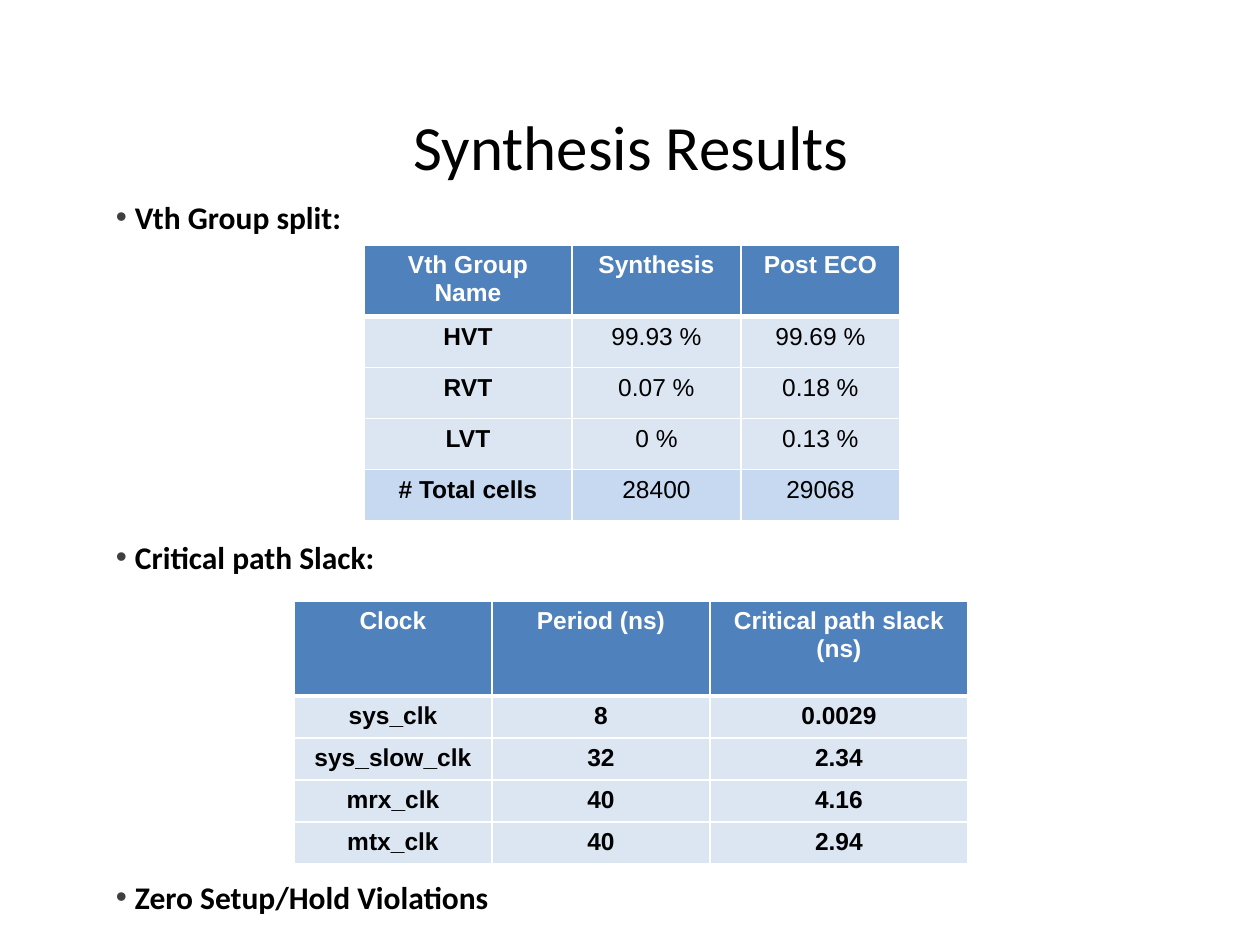
from lxml import etree
from pptx import Presentation, util as u
from pptx.dml.color import RGBColor
from pptx.enum import text
from pptx.oxml.ns import qn

TITLE = "Synthesis Results"
BULLETS = ["Vth Group split:", "Critical path Slack:", "Zero Setup/Hold Violations"]
GROUP_TABLE = {
    "origin": (364, 245), "columns": (208, 169, 159), "rows": (67, 51, 51, 51, 51),
    "bold_columns": 1, "total": True,
    "cells": [
        ("Vth Group Name", "Synthesis", "Post ECO"),
        ("HVT", "99.93 %", "99.69 %"),
        ("RVT", "0.07 %", "0.18 %"),
        ("LVT", "0 %", "0.13 %"),
        ("# Total cells", "28400", "29068"),
    ],
}
SLACK_TABLE = {
    "origin": (294, 601), "columns": (198, 218, 258), "rows": (95, 40, 40, 40, 40),
    "bold_columns": 3, "total": False,
    "cells": [
        ("Clock", "Period (ns)", "Critical path slack (ns)"),
        ("sys_clk", "8", "0.0029"),
        ("sys_slow_clk", "32", "2.34"),
        ("mrx_clk", "40", "4.16"),
        ("mtx_clk", "40", "2.94"),
    ],
}
THEME = {
    "heading_font": "Calibri", "table_font": "Arial",
    "title": 36, "bullet": 18, "cell": 14,
    "black": "000000", "white": "FFFFFF", "marker": "3F3F3F",
    "header": "4F81BD", "body": "DCE6F2", "total": "C6D9F1",
}
INSET = 13
BULLET_INDENT = 19
BULLET_MARGIN = 48
BULLET_GAP = 302


def px(length):
    return u.Emu(round(length * 914400 / 126))


def style(paragraph, font, size, color, bold=False):
    paragraph.font.name = THEME[font]
    paragraph.font.size = u.Pt(THEME[size])
    paragraph.font.color.rgb = RGBColor.from_string(THEME[color])
    paragraph.font.bold = bold


def add_text_frame(slide, left, top, width, height):
    frame = slide.shapes.add_textbox(px(left), px(top), px(width), px(height)).text_frame
    frame.word_wrap = True
    frame.margin_left = frame.margin_right = px(INSET)
    frame.margin_top = frame.margin_bottom = px(INSET)
    return frame


def add_bullet(paragraph):
    properties = paragraph._p.get_or_add_pPr()
    properties.set("marL", str(px(BULLET_MARGIN)))
    properties.set("indent", str(px(-BULLET_INDENT)))
    color = etree.SubElement(properties, qn("a:buClr"))
    etree.SubElement(color, qn("a:srgbClr"), val=THEME["marker"])
    etree.SubElement(properties, qn("a:buFont"), typeface=THEME["table_font"])
    etree.SubElement(properties, qn("a:buChar"), char="•")


def add_borders(cell, top, bottom):
    properties = cell._tc.get_or_add_tcPr()
    widths = {"lnL": 1, "lnR": 1, "lnT": top, "lnB": bottom}
    for position, (side, width) in enumerate(widths.items()):
        line = etree.Element(qn(f"a:{side}"), w=str(u.Pt(width)))
        fill = etree.SubElement(line, qn("a:solidFill"))
        etree.SubElement(fill, qn("a:srgbClr"), val=THEME["white"])
        properties.insert(position, line)


def add_table(slide, data):
    columns, rows, cells = data["columns"], data["rows"], data["cells"]
    left, top = data["origin"]
    table = slide.shapes.add_table(
        len(rows), len(columns), px(left), px(top), px(sum(columns)), px(sum(rows))
    ).table
    table.horz_banding = False
    for column, width in zip(table.columns, columns):
        column.width = px(width)
    for row_index, (height, values) in enumerate(zip(rows, cells)):
        table.rows[row_index].height = px(height)
        header = row_index == 0
        total = data["total"] and row_index == len(rows) - 1
        fill = "header" if header else "total" if total else "body"
        for column_index, value in enumerate(values):
            cell = table.cell(row_index, column_index)
            cell.fill.solid()
            cell.fill.fore_color.rgb = RGBColor.from_string(THEME[fill])
            add_borders(cell, 3 if row_index == 1 else 1, 3 if header else 1)
            cell.text = value
            paragraph = cell.text_frame.paragraphs[0]
            paragraph.alignment = text.PP_ALIGN.CENTER
            bold = header or column_index < data["bold_columns"]
            style(paragraph, "table_font", "cell", "white" if header else "black", bold)


def main():
    presentation = Presentation()
    presentation.slide_width, presentation.slide_height = px(1260), px(945)
    slide = presentation.slides.add_slide(presentation.slide_layouts[6])

    title = add_text_frame(slide, 64, 66, 1134, 158)
    title.vertical_anchor = text.MSO_ANCHOR.MIDDLE
    title.text = TITLE
    title.paragraphs[0].alignment = text.PP_ALIGN.CENTER
    style(title.paragraphs[0], "heading_font", "title", "black")

    body = add_text_frame(slide, 74, 185, 1134, 704)
    for index, bullet in enumerate(BULLETS):
        paragraph = body.add_paragraph() if index else body.paragraphs[0]
        paragraph.text = bullet
        add_bullet(paragraph)
        if index:
            paragraph.space_before = px(BULLET_GAP)
        style(paragraph, "heading_font", "bullet", "black", True)

    for data in (GROUP_TABLE, SLACK_TABLE):
        add_table(slide, data)
    presentation.save("out.pptx")


if __name__ == "__main__":
    main()
